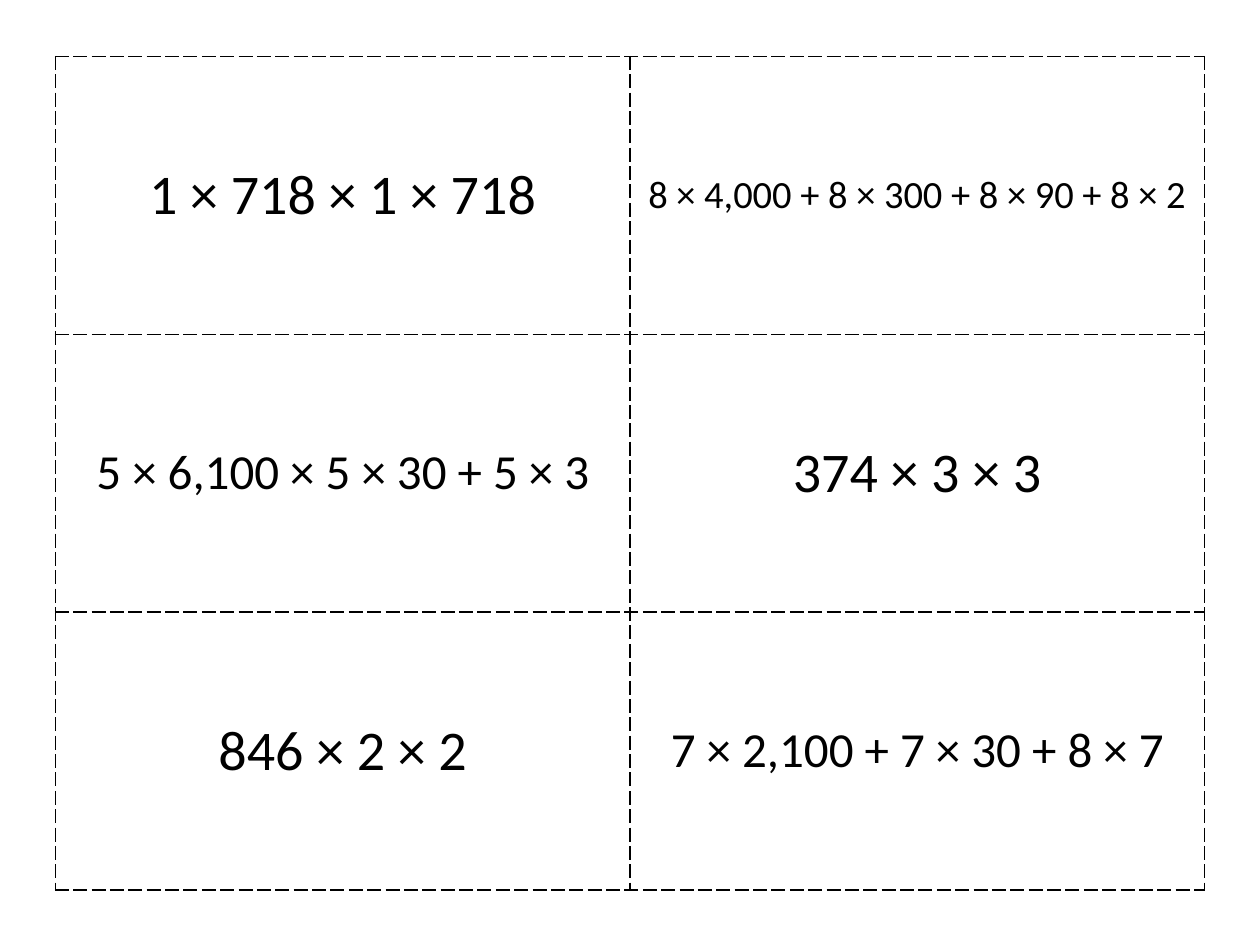
from lxml import etree
from pptx import Presentation
from pptx import util as u
from pptx.dml import color
from pptx.enum import text
from pptx.oxml import ns

CARDS = [
    [("1 × 718 × 1 × 718", 32), ("8 × 4,000 + 8 × 300 + 8 × 90 + 8 × 2", 22)],
    [("5 × 6,100 × 5 × 30 + 5 × 3", 28), ("374 × 3 × 3", 32)],
    [("846 × 2 × 2", 32), ("7 × 2,100 + 7 × 30 + 8 × 7", 28)],
]


def rgb(code):
    return color.RGBColor.from_string(code)


def write(frame, words, size=32, font="Calibri", ink="000000"):
    par = frame.paragraphs[0]
    par.alignment = text.PP_ALIGN.CENTER
    run = par.add_run()
    run.text = words
    run.font.size = u.Pt(size)
    run.font.name = font
    run.font.color.rgb = rgb(ink)


class Sheet:
    """Holds the card style and the current slide."""

    ink = "000000"
    font = "Calibri"
    dash = "lgDash"
    rule = u.Pt(1)

    def __init__(self, slide):
        self.slide = slide

    def edge(self, cell):
        props = cell._tc.get_or_add_tcPr()
        for place, side in enumerate(("lnL", "lnR", "lnT", "lnB")):
            line = etree.Element(ns.qn(f"a:{side}"), w=str(self.rule))
            fill = etree.SubElement(line, ns.qn("a:solidFill"))
            etree.SubElement(fill, ns.qn("a:srgbClr"), val=self.ink)
            etree.SubElement(line, ns.qn("a:prstDash"), val=self.dash)
            props.insert(place, line)

    def grid(self, cards, left, top, wide, high):
        rows, cols = len(cards), len(cards[0])
        table = self.slide.shapes.add_table(
            rows, cols, u.Cm(left), u.Cm(top), u.Cm(wide * cols), u.Cm(high * rows)
        ).table
        table.first_row = table.horz_banding = False
        for col in table.columns:
            col.width = u.Cm(wide)
        for r, row in enumerate(cards):
            table.rows[r].height = u.Cm(high)
            for c, (words, size) in enumerate(row):
                cell = table.cell(r, c)
                cell.fill.background()
                cell.vertical_anchor = text.MSO_ANCHOR.MIDDLE
                self.edge(cell)
                write(cell.text_frame, words, size=size, font=self.font, ink=self.ink)


def main():
    deck = Presentation()
    deck.slide_width, deck.slide_height = u.Cm(25.4), u.Cm(19.05)
    sheet = Sheet(deck.slides.add_slide(deck.slide_layouts[6]))
    sheet.grid(CARDS, left=1.12, top=1.14, wide=11.58, high=5.6)
    deck.save("out.pptx")


if __name__ == "__main__":
    main()
